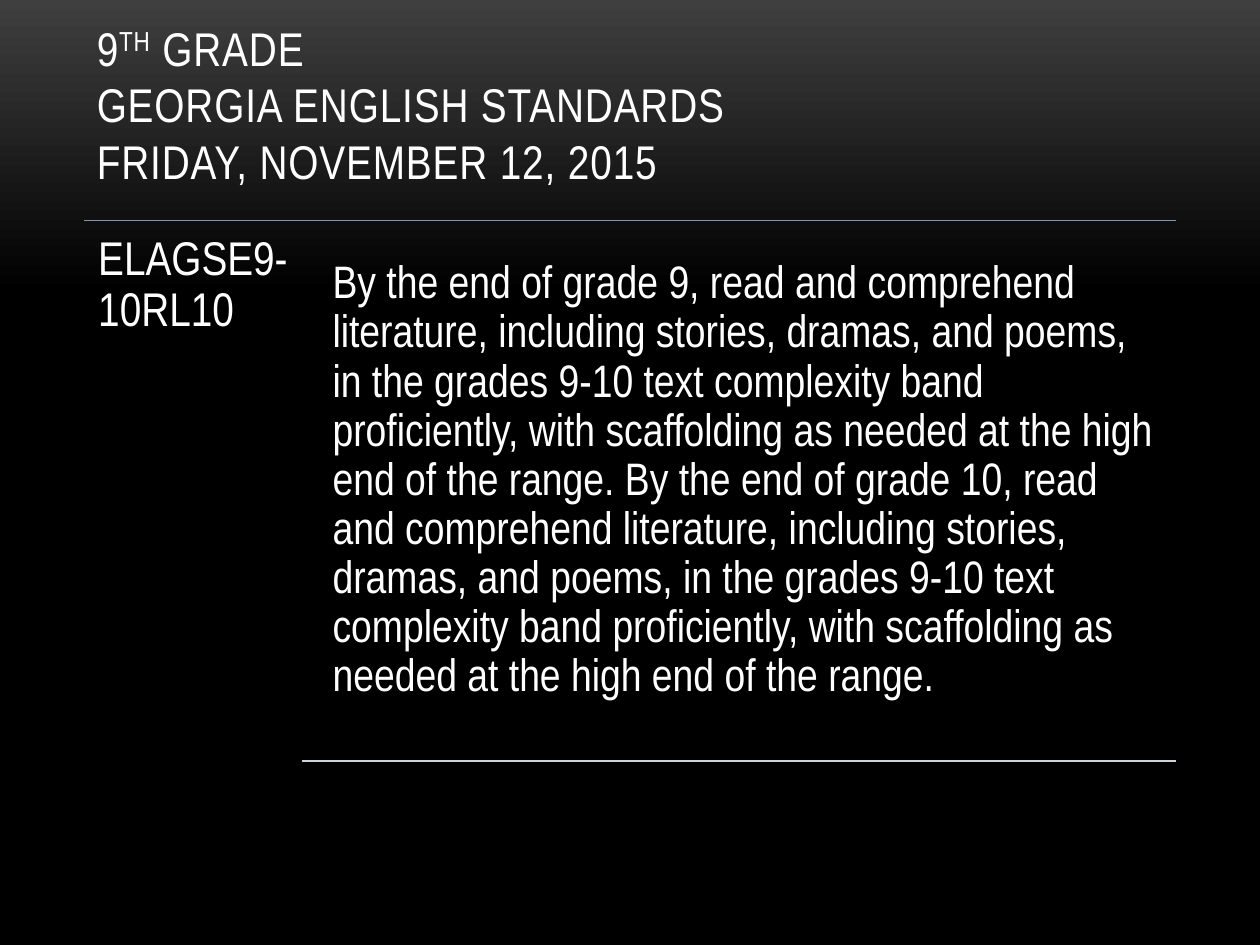
import pptx
import pptx.util
import pptx.dml.color
import pptx.enum.shapes
import pptx.enum.text
import pptx.oxml.ns
import copy
from lxml import etree

Inches = pptx.util.Inches
Pt = pptx.util.Pt
RGBColor = pptx.dml.color.RGBColor
Anchor = pptx.enum.text.MSO_ANCHOR
qn = pptx.oxml.ns.qn

WHITE = RGBColor(0xFF, 0xFF, 0xFF)
BLACK = RGBColor(0, 0, 0)
GRAY = RGBColor(0x3F, 0x3F, 0x3F)
BLUE = RGBColor(0x7E, 0x97, 0xAD)
PALE = RGBColor(0xCC, 0xD3, 0xDB)

deck = pptx.Presentation()
deck.slide_width = Inches(10)
deck.slide_height = Inches(7.5)
slide = deck.slides.add_slide(deck.slide_layouts[6])


def add_text(text, box, size, pad=0.11, pitch=0.9, after=0.35,
             anchor=Anchor.TOP, raised="", spread=0):
    """Add a text box; the part named by raised becomes superscript."""
    frame = slide.shapes.add_textbox(*map(Inches, box)).text_frame
    frame.word_wrap = True
    frame.vertical_anchor = anchor
    frame.margin_left = frame.margin_right = Inches(pad)
    frame.margin_top = frame.margin_bottom = Inches(min(pad, 0.11) if after else 0.05)
    para = frame.paragraphs[0]
    para.line_spacing = pitch
    para.space_after = Pt(size * after)
    for row, line in enumerate(text.split("\n")):
        if row:
            para.add_line_break()
        head, mark, tail = line.partition(raised) if raised else (line, "", "")
        for part in filter(None, (head, mark, tail)):
            run = para.add_run()
            run.text = part
            run.font.name = "Arial Narrow"
            run.font.size = Pt(size)
            run.font.color.rgb = WHITE
            props = run.font._element if hasattr(run.font, "_element") else run._r.get_or_add_rPr()
            if spread:
                props.set("spc", str(int(spread * 100)))
            if part == raised:
                props.set("baseline", "30000")
    # Line breaks take the same size as the text
    for brk in para._p.findall(qn("a:br")):
        etree.SubElement(brk, qn("a:rPr")).set("sz", str(size * 100))


# Background: gray fading down to black
fill = slide.background.fill
fill.gradient()
fill.gradient_angle = 270
for stop, (place, color) in zip(fill.gradient_stops, ((0, GRAY), (0.31, BLACK))):
    stop.position = place
    stop.color.rgb = color
last = slide.background._cSld.findall(".//" + qn("a:gs"))[-1]
end = copy.deepcopy(last)
end.set("pos", "100000")
last.addnext(end)

# Title
add_text("9TH GRADE\nGEORGIA ENGLISH STANDARDS\nFRIDAY, NOVEMBER 12, 2015",
         (0.67, 0.3, 8.67, 1.25), 27, pad=0.1, pitch=1, after=0,
         anchor=Anchor.BOTTOM, raised="TH", spread=0.5)

# Rules above and below the standard
for left, top, color in ((0.67, 1.75, BLUE), (2.4, 6.04, PALE)):
    rule = slide.shapes.add_connector(
        pptx.enum.shapes.MSO_CONNECTOR.STRAIGHT,
        Inches(left), Inches(top), Inches(9.33), Inches(top))
    rule.line.color.rgb = color
    rule.line.width = Pt(0.85)
    etree.SubElement(rule._element.spPr, qn("a:effectLst"))

# Standard code and its wording
add_text("ELAGSE9-10RL10", (0.67, 1.75, 1.73, 4.5), 27)
add_text("By the end of grade 9, read and comprehend literature, including "
         "stories, dramas, and poems, in the grades 9-10 text complexity band "
         "proficiently, with scaffolding as needed at the high end of the range. "
         "By the end of grade 10, read and comprehend literature, including "
         "stories, dramas, and poems, in the grades 9-10 text complexity band "
         "proficiently, with scaffolding as needed at the high end of the range.",
         (2.53, 1.95, 6.8, 4.09), 26)

deck.save("out.pptx")
